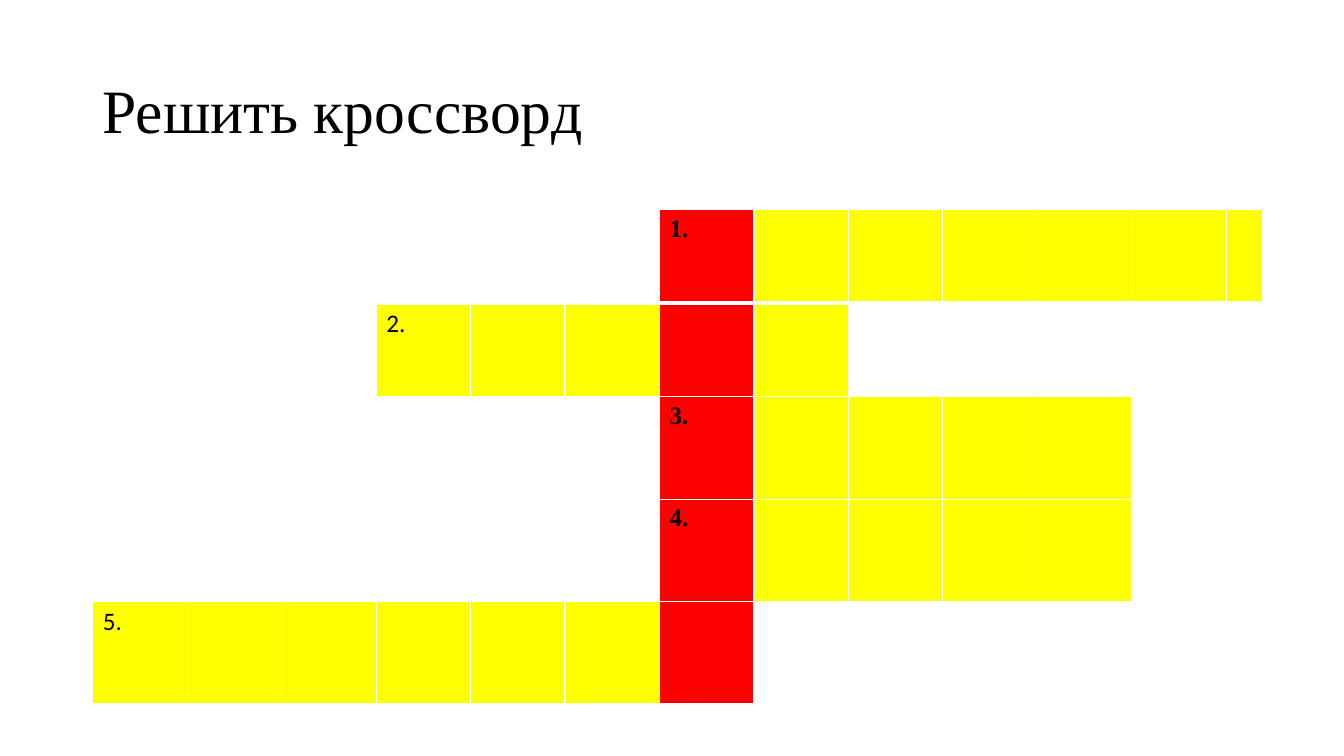
"""Build a crossword slide with a highlighted answer column."""
import pptx
import pptx.dml.color
import pptx.enum.text
import pptx.util
from lxml import etree
from pptx.oxml.ns import qn
from pptx.util import Cm, Pt

COLORS = {"ink": "000000", "letter": "FFFF00", "answer": "FF0000", "grid": "FFFFFF"}
SERIF, SANS = "Times New Roman", "Calibri"
COLUMN_WIDTHS = [2.38] * 12 + [0.91]
ROW_HEIGHTS = [2.36] * 2 + [2.58] * 3
ANSWER_COLUMN = 6
WORDS = [(6, 7), (3, 5), (6, 5), (6, 5), (0, 7)]


def rgb(name):
    """Return the named colour."""
    return pptx.dml.color.RGBColor.from_string(COLORS[name])


def style_text(paragraph, size, face, bold=False):
    """Set the font of a paragraph."""
    font = paragraph.font
    font.size, font.name, font.bold = Pt(size), face, bold
    font.color.rgb = rgb("ink")


def add_title(slide, wording):
    """Add the slide title."""
    title = slide.shapes.add_textbox(Cm(2.33), Cm(1.01), Cm(29.21), Cm(3.68))
    frame = title.text_frame
    frame.word_wrap = True
    frame.vertical_anchor = pptx.enum.text.MSO_ANCHOR.MIDDLE
    heading = frame.paragraphs[0]
    heading.text = wording
    heading.line_spacing = 0.9
    style_text(heading, 44, SERIF)


def add_borders(cell, row):
    """Draw grid lines, with a thicker one under the first row."""
    properties = cell._tc.get_or_add_tcPr()
    widths = {"lnL": 1, "lnR": 1, "lnT": 3 if row == 1 else 1, "lnB": 3 if row == 0 else 1}
    for side, width in widths.items():
        line = etree.SubElement(properties, qn(f"a:{side}"), w=str(Pt(width)))
        fill = etree.SubElement(line, qn("a:solidFill"))
        etree.SubElement(fill, qn("a:srgbClr"), val=COLORS["grid"])


def fill_cell(cell, column, start, length):
    """Colour a cell if it belongs to the word."""
    if start <= column < start + length:
        cell.fill.solid()
        cell.fill.fore_color.rgb = rgb("answer" if column == ANSWER_COLUMN else "letter")
    else:
        cell.fill.background()


def number_word(cell, number, starts_in_answer):
    """Write the number of a word in its first cell."""
    label = cell.text_frame.paragraphs[0]
    label.text = f"{number}."
    style_text(label, 18, SERIF if starts_in_answer else SANS, starts_in_answer)


def add_crossword(slide):
    """Add the crossword grid."""
    crossword = slide.shapes.add_table(
        len(ROW_HEIGHTS), len(COLUMN_WIDTHS), Cm(2.34), Cm(5.28),
        Cm(sum(COLUMN_WIDTHS)), Cm(sum(ROW_HEIGHTS))).table
    crossword.first_row = crossword.horz_banding = False
    for column, width in zip(crossword.columns, COLUMN_WIDTHS):
        column.width = Cm(width)
    for row, (height, (start, length)) in enumerate(zip(ROW_HEIGHTS, WORDS)):
        crossword.rows[row].height = Cm(height)
        for column in range(len(COLUMN_WIDTHS)):
            cell = crossword.cell(row, column)
            add_borders(cell, row)
            fill_cell(cell, column, start, length)
        number_word(crossword.cell(row, start), row + 1, start == ANSWER_COLUMN)


def main():
    """Build and save the presentation."""
    presentation = pptx.Presentation()
    presentation.slide_width, presentation.slide_height = Cm(33.87), Cm(19.05)
    slide = presentation.slides.add_slide(presentation.slide_layouts[6])
    add_title(slide, "Решить кроссворд")
    add_crossword(slide)
    presentation.save("out.pptx")


if __name__ == "__main__":
    main()
